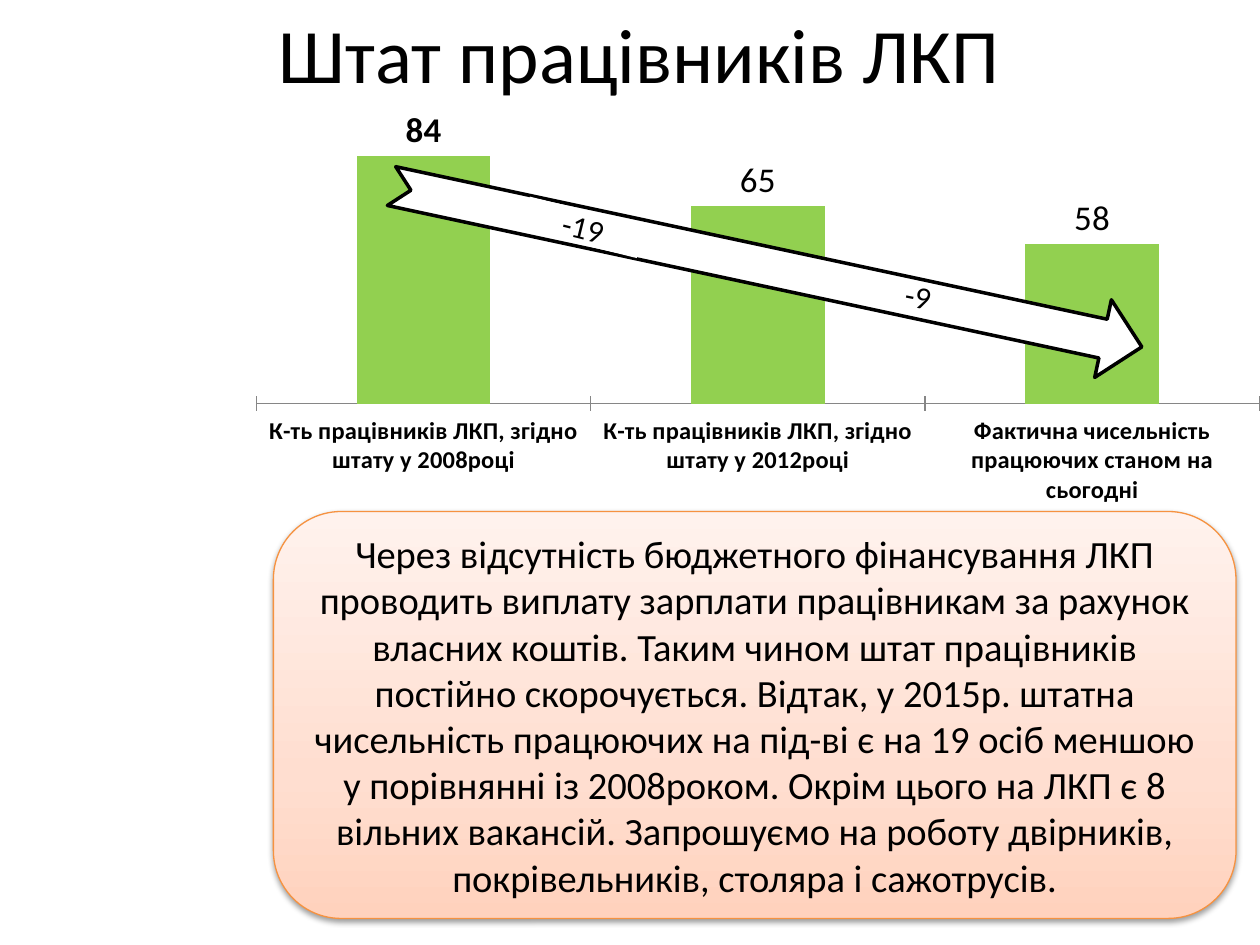
import pptx
import pptx.chart.data
import pptx.dml.color
import pptx.enum.chart
import pptx.enum.shapes
import pptx.enum.text
import pptx.oxml
import pptx.oxml.ns
import pptx.util

Inches, Pt = pptx.util.Inches, pptx.util.Pt
RGBColor = pptx.dml.color.RGBColor
Shape = pptx.enum.shapes.MSO_SHAPE
Chart = pptx.enum.chart

BLACK = RGBColor(0x00, 0x00, 0x00)
WHITE = RGBColor(0xFF, 0xFF, 0xFF)
GREEN = RGBColor(0x92, 0xD0, 0x50)
ORANGE = RGBColor(0xF6, 0x92, 0x40)
GREY = RGBColor(0x86, 0x86, 0x86)
PEACH_STOPS = [(0, RGBColor(0xFF, 0xD2, 0xBD)), (35, RGBColor(0xFF, 0xDE, 0xD0)),
               (100, RGBColor(0xFF, 0xF2, 0xED))]

TITLE = "Штат працівників ЛКП"
STAFF = [
    ("К-ть працівників ЛКП, згідно штату у 2008році", 84),
    ("К-ть працівників ЛКП, згідно штату у 2012році", 67),
    ("Фактична чисельність працюючих станом на сьогодні", 54),
]
LABEL_TEXTS = {1: "65", 2: "58"}
SUMMARY = (
    "Через відсутність бюджетного фінансування ЛКП проводить виплату зарплати "
    "працівникам за рахунок власних коштів. Таким чином штат працівників постійно "
    "скорочується. Відтак, у 2015р. штатна чисельність працюючих на під-ві є на 19 осіб "
    "меншою у порівнянні із 2008роком. Окрім цього на ЛКП є 8 вільних вакансій. "
    "Запрошуємо на роботу двірників, покрівельників, столяра і сажотрусів."
)


def set_font(font, size, bold=False):
    for name, value in {"name": "Calibri", "size": Pt(size), "bold": bold}.items():
        setattr(font, name, value)
    font.color.rgb = BLACK


def write(box, text, size):
    frame = box.text_frame
    frame.word_wrap = True
    frame.vertical_anchor = pptx.enum.text.MSO_ANCHOR.MIDDLE
    para = frame.paragraphs[0]
    para.alignment = pptx.enum.text.PP_ALIGN.CENTER
    span = para.add_run()
    span.text = text
    set_font(span.font, size)


def add_text(page, place, text, size, rotation=0):
    box = page.shapes.add_textbox(*map(Inches, place))
    box.rotation = rotation
    write(box, text, size)
    return box


def add_shape(page, kind, place, line=None, width=1):
    shape = page.shapes.add_shape(kind, *map(Inches, place))
    shape.shadow.inherit = False
    shape.fill.solid()
    shape.fill.fore_color.rgb = WHITE
    if line is None:
        shape.line.fill.background()
    else:
        shape.line.color.rgb = line
        shape.line.width = Pt(width)
    return shape


def add_glow(shape):
    """Give the shape an upward three-stop gradient and a soft shadow below."""
    namespace = pptx.oxml.ns.nsdecls("a")
    stops = "".join(f'<a:gs pos="{pos * 1000}"><a:srgbClr val="{color}"/></a:gs>'
                    for pos, color in PEACH_STOPS)
    gradient = (f'<a:gradFill {namespace} rotWithShape="1"><a:gsLst>{stops}</a:gsLst>'
                '<a:lin ang="16200000" scaled="1"/></a:gradFill>')
    shadow = (f'<a:effectLst {namespace}><a:outerShdw blurRad="{Pt(3.1)}" '
              f'dist="{Pt(1.6)}" dir="5400000" rotWithShape="0">'
              '<a:srgbClr val="000000"><a:alpha val="38000"/></a:srgbClr>'
              '</a:outerShdw></a:effectLst>')
    properties = shape.element.spPr
    for tag, xml in {"a:solidFill": gradient, "a:effectLst": shadow}.items():
        old = properties.find(pptx.oxml.ns.qn(tag))
        properties.replace(old, pptx.oxml.parse_xml(xml))


def add_inner_layout(chart, x, y, width, height):
    values = {"x": x, "y": y, "w": width, "h": height}
    modes = '<c:xMode val="edge"/><c:yMode val="edge"/>'
    sizes = "".join(f'<c:{name} val="{value}"/>' for name, value in values.items())
    layout = pptx.oxml.parse_xml(
        f'<c:layout {pptx.oxml.ns.nsdecls("c")}><c:manualLayout>'
        f'<c:layoutTarget val="inner"/>{modes}{sizes}</c:manualLayout></c:layout>')
    area = chart.element.chart.plotArea
    old = area.find(pptx.oxml.ns.qn("c:layout"))
    if old is not None:
        area.remove(old)
    area.insert(0, layout)


def add_staff_chart(page):
    data = pptx.chart.data.CategoryChartData()
    data.categories = [name for name, _ in STAFF]
    data.add_series("Series 1", [count for _, count in STAFF])
    place = map(Inches, (2.03, 0.86, 7.97, 3.53))
    chart = page.shapes.add_chart(Chart.XL_CHART_TYPE.COLUMN_CLUSTERED, *place, data).chart
    chart.has_legend = chart.has_title = False
    set_font(chart.font, 10)
    add_inner_layout(chart, 0, 0.04, 1, 0.62)

    scale = chart.value_axis
    for name, value in {"visible": False, "has_major_gridlines": False,
                        "minimum_scale": 0, "maximum_scale": 92.5}.items():
        setattr(scale, name, value)
    axis = chart.category_axis
    axis.major_tick_mark = Chart.XL_TICK_MARK.CROSS
    axis.format.line.color.rgb = GREY
    set_font(axis.tick_labels.font, 14, bold=True)

    plot = chart.plots[0]
    plot.gap_width = 150
    plot.vary_by_categories = False
    series = plot.series[0]
    series.format.fill.solid()
    series.format.fill.fore_color.rgb = GREEN
    labels = series.data_labels
    labels.show_value = True
    labels.position = Chart.XL_LABEL_POSITION.OUTSIDE_END
    set_font(labels.font, 20, bold=True)
    for index, text in LABEL_TEXTS.items():
        label = series.points[index].data_label
        span = label.text_frame.paragraphs[0].add_run()
        span.text = text
        set_font(span.font, 20)
        label.position = Chart.XL_LABEL_POSITION.OUTSIDE_END


def main():
    deck = pptx.Presentation()
    deck.slide_width, deck.slide_height = Inches(10), Inches(7.5)
    page = deck.slides.add_slide(deck.slide_layouts[6])

    add_text(page, (2.01, 0, 6.13, 0.83), TITLE, 44)
    summary = add_shape(page, Shape.ROUNDED_RECTANGLE, (2.17, 4.06, 7.64, 3.23), ORANGE, 0.75)
    add_glow(summary)
    write(summary, SUMMARY, 22)
    add_staff_chart(page)

    arrow = add_shape(page, Shape.NOTCHED_RIGHT_ARROW, (3.04, 1.8, 6.09, 0.63), BLACK, 2)
    arrow.rotation = 12.1
    first_drop = add_shape(page, Shape.RECTANGLE, (4.16, 1.67, 0.94, 0.27))
    first_drop.rotation = 13.9
    write(first_drop, "-19", 18)
    add_text(page, (6.82, 2.2, 0.94, 0.3), "-9", 18, rotation=11.1)

    deck.save("out.pptx")


if __name__ == "__main__":
    main()
